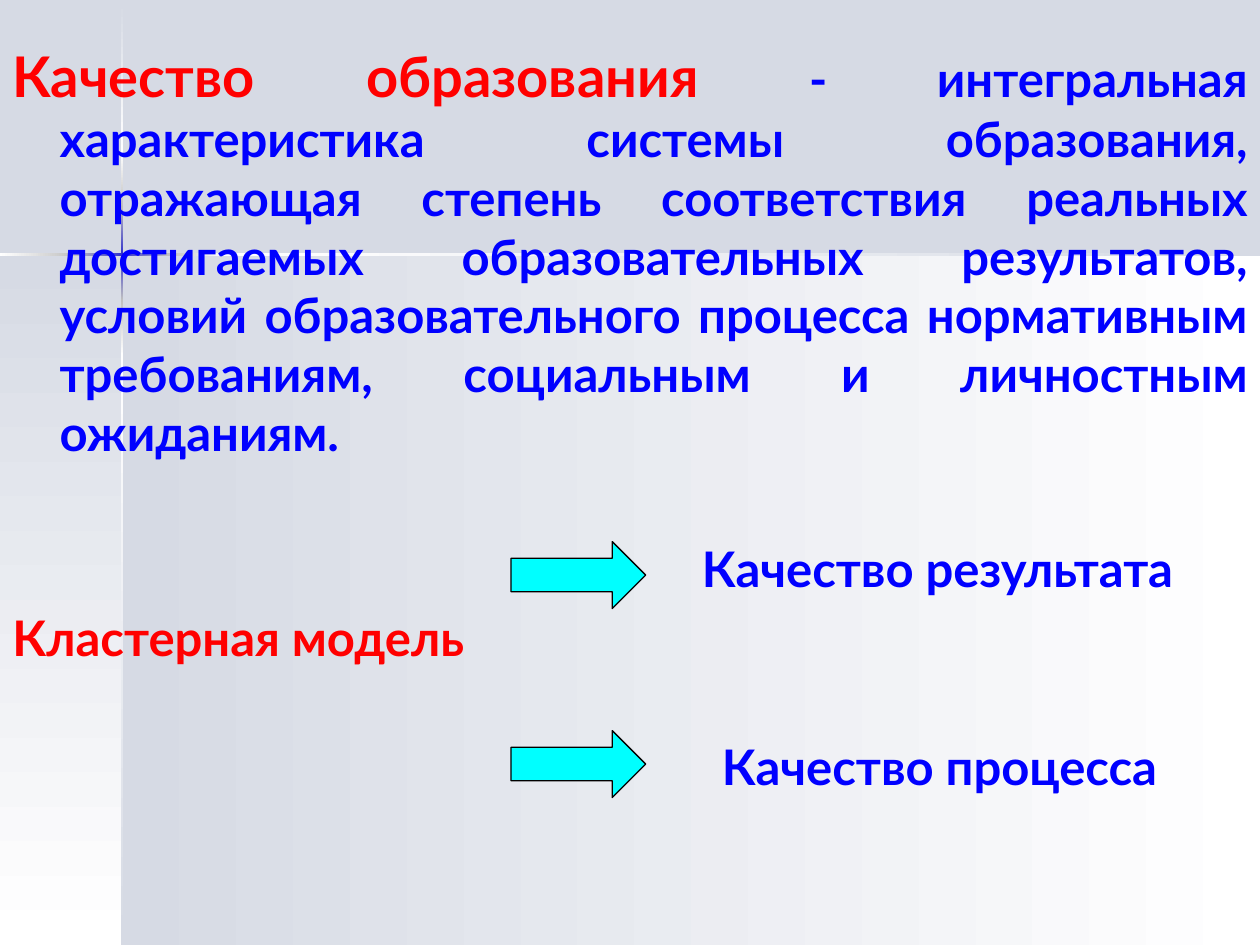
from copy import deepcopy
from itertools import pairwise

from pptx import Presentation
from pptx.dml.color import RGBColor
from pptx.enum.shapes import MSO_SHAPE
from pptx.enum.text import MSO_AUTO_SIZE, PP_ALIGN
from pptx.oxml.ns import qn
from pptx.util import Pt

PALE = RGBColor(0xD6, 0xDA, 0xE4)
WHITE = RGBColor(0xFF, 0xFF, 0xFF)
GRAY = RGBColor(0xC0, 0xC0, 0xC0)
INDIGO = RGBColor(0x33, 0x33, 0xCC)
RED = RGBColor(0xFF, 0x00, 0x00)
BLUE = RGBColor(0x00, 0x00, 0xFF)
CYAN = RGBColor(0x00, 0xFF, 0xFF)
BLACK = RGBColor(0x00, 0x00, 0x00)

FONT = "Lato"
SLIDE_WIDTH, SLIDE_HEIGHT = 720, 540
COLUMN_WIDTH, BAND_HEIGHT = 70, 145.5
RULE_LEFT, RULE_TOP, RULE_WIDTH = 69, 144.75, 1.5
RULE_BLENDS = [
    (PALE, WHITE),
    (WHITE, GRAY),
    (GRAY, INDIGO, GRAY),
    (GRAY, WHITE),
    (WHITE, PALE),
]
VERTICAL_BREAKS = [1, 87, 119, 171.5, 203, 540]
HORIZONTAL_BREAKS = [0, 43.5, 96, 127.5, 720]

TERM = "Качество образования"
DEFINITION = (
    "- интегральная характеристика системы образования, отражающая степень "
    "соответствия реальных достигаемых образовательных результатов, условий "
    "образовательного процесса нормативным требованиям, социальным и "
    "личностным ожиданиям."
)
LABELS = [
    ("Кластерная модель", 0, 343.5, 290, RED),
    ("Качество результата", 394, 304, 307.5, BLUE),
    ("Качество процесса", 405.5, 417.5, 282, BLUE),
]
ARROW_TOPS = [309.5, 417.5]


def add_gradient_panel(slide, left, top, width, height, colors, vertical):
    """Add a borderless rectangle with evenly spaced gradient colours."""
    panel = slide.shapes.add_shape(
        MSO_SHAPE.RECTANGLE, Pt(left), Pt(top), Pt(width), Pt(height)
    )
    panel.shadow.inherit = False
    panel.line.fill.background()
    panel.fill.gradient()
    panel.fill.gradient_angle = 270 if vertical else 0
    stop_list = panel._element.spPr.find(qn("a:gradFill")).find(qn("a:gsLst"))
    for _ in colors[2:]:
        stop_list.append(deepcopy(stop_list[0]))
    for index, (stop, color) in enumerate(zip(panel.fill.gradient_stops, colors)):
        stop.position = index / (len(colors) - 1)
        stop.color.rgb = color


def add_backdrop(slide):
    """Add the shaded panels and the two crossing hairlines."""
    panel_height = SLIDE_HEIGHT - BAND_HEIGHT
    add_gradient_panel(slide, COLUMN_WIDTH, BAND_HEIGHT, SLIDE_WIDTH - COLUMN_WIDTH,
                       panel_height, (PALE, WHITE), False)
    add_gradient_panel(slide, 0, BAND_HEIGHT, COLUMN_WIDTH,
                       panel_height, (PALE, WHITE), True)
    for (start, end), blend in zip(pairwise(HORIZONTAL_BREAKS), RULE_BLENDS[1:]):
        add_gradient_panel(slide, start, RULE_TOP, end - start, RULE_WIDTH, blend, False)
    for (start, end), blend in zip(pairwise(VERTICAL_BREAKS), RULE_BLENDS):
        add_gradient_panel(slide, RULE_LEFT, start, RULE_WIDTH, end - start, blend, True)


def add_text(slide, left, top, width, height, runs, wrap):
    """Add a text box of bold runs and return its paragraph."""
    box = slide.shapes.add_textbox(Pt(left), Pt(top), Pt(width), Pt(height))
    frame = box.text_frame
    frame.word_wrap = wrap
    frame.auto_size = MSO_AUTO_SIZE.SHAPE_TO_FIT_TEXT
    paragraph = frame.paragraphs[0]
    for text, size, color in runs:
        run = paragraph.add_run()
        run.text = text
        run.font.name = FONT
        run.font.size = Pt(size)
        run.font.bold = True
        run.font.color.rgb = color
    return paragraph


def add_definition(slide):
    """Add the justified definition with a hanging indent."""
    runs = [(TERM, 32, RED), (" ", 28, BLACK), (DEFINITION, 28, BLUE)]
    paragraph = add_text(slide, 0, 20, SLIDE_WIDTH, 286, runs, True)
    paragraph.alignment = PP_ALIGN.JUSTIFY
    properties = paragraph._p.get_or_add_pPr()
    properties.set("marL", str(Pt(27)))
    properties.set("indent", str(Pt(-27)))


def add_arrow(slide, top):
    """Add a block arrow pointing from the model to a quality."""
    arrow = slide.shapes.add_shape(
        MSO_SHAPE.RIGHT_ARROW, Pt(292), Pt(top), Pt(77), Pt(38.25)
    )
    arrow.shadow.inherit = False
    arrow.fill.solid()
    arrow.fill.fore_color.rgb = CYAN
    arrow.line.color.rgb = BLACK
    arrow.line.width = Pt(0.75)


def main():
    """Build and save the slide."""
    presentation = Presentation()
    presentation.slide_width = Pt(SLIDE_WIDTH)
    presentation.slide_height = Pt(SLIDE_HEIGHT)
    slide = presentation.slides.add_slide(presentation.slide_layouts[6])
    slide.background.fill.solid()
    slide.background.fill.fore_color.rgb = PALE
    add_backdrop(slide)
    add_definition(slide)
    for text, left, top, width, color in LABELS:
        add_text(slide, left, top, width, 41, [(text, 28, color)], False)
    for top in ARROW_TOPS:
        add_arrow(slide, top)
    presentation.save("out.pptx")


if __name__ == "__main__":
    main()
